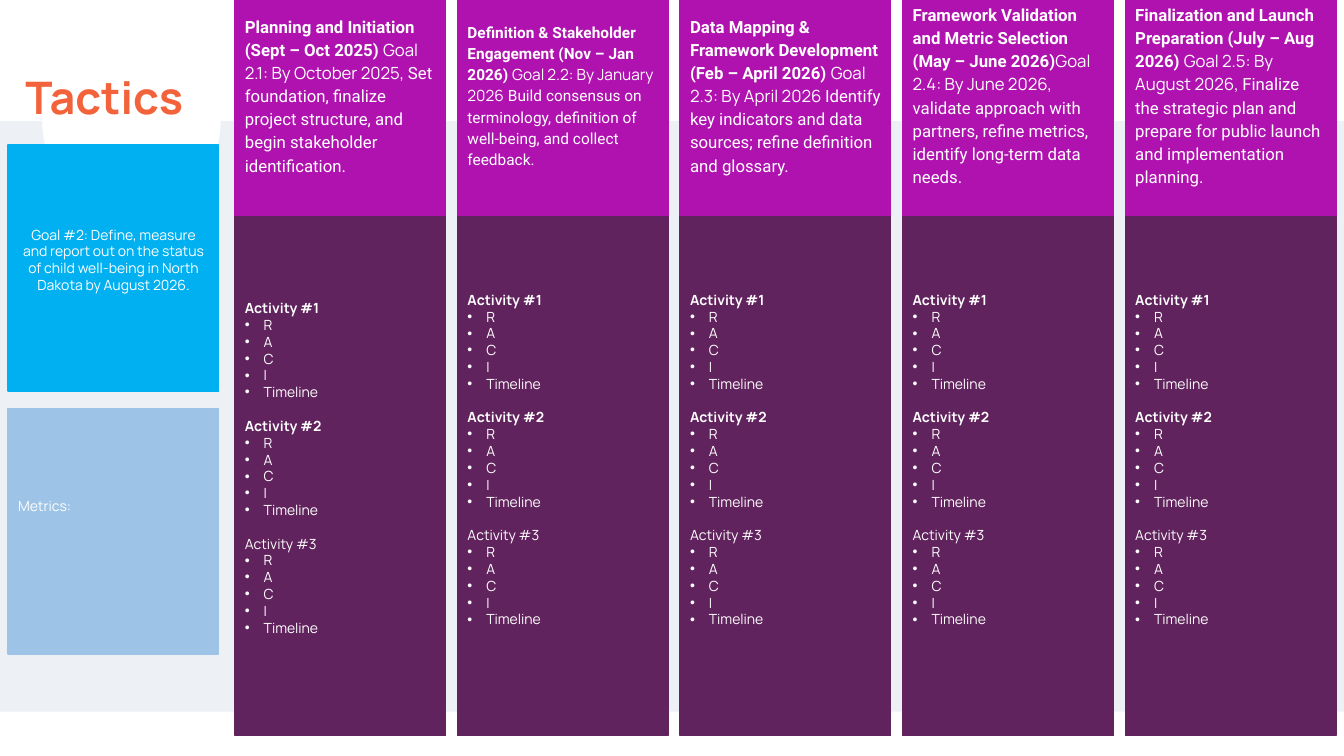
from dataclasses import dataclass

from lxml.etree import SubElement
from pptx import Presentation
from pptx.dml.color import RGBColor as RGB
from pptx.enum.shapes import MSO_SHAPE as SHAPE
from pptx.enum.text import MSO_ANCHOR as ANCHOR, PP_ALIGN as ALIGN
from pptx.oxml.ns import qn
from pptx.util import Pt


@dataclass(frozen=True)
class Theme:
    white: RGB = RGB(0xFF, 0xFF, 0xFF)
    band: RGB = RGB(0xED, 0xF0, 0xF5)
    title: RGB = RGB(0xF3, 0x63, 0x3B)
    phase: RGB = RGB(0xB0, 0x12, 0xB0)
    activities: RGB = RGB(0x61, 0x23, 0x5D)
    goal: RGB = RGB(0x00, 0xB0, 0xF0)
    metrics: RGB = RGB(0x9D, 0xC3, 0xE6)
    body_font: str = "Manrope"
    phase_font: str = "Roboto"
    title_size: int = 32
    body_size: int = 10


THEME = Theme()
LINE = 12  # height of one line of body text

PHASES = [
    (12, "Planning and Initiation (Sept – Oct 2025) ",
     "Goal 2.1: By October 2025, ",
     "Set foundation, finalize project structure, and begin stakeholder identification."),
    (11, "Definition & Stakeholder Engagement (Nov – Jan 2026) ",
     "Goal 2.2: By January 2026",
     " Build consensus on terminology, definition of well-being, and collect feedback."),
    (12, "Data Mapping & Framework Development (Feb – April 2026) ",
     "Goal 2.3: By April 2026 ",
     "Identify key indicators and data sources; refine definition and glossary."),
    (12, "Framework Validation and Metric Selection (May – June 2026)",
     "Goal 2.4: By June 2026, ",
     "validate approach with partners, refine metrics, identify long-term data needs."),
    (12, "Finalization and Launch Preparation (July – Aug 2026) ",
     "Goal 2.5: By August 2026, ",
     "Finalize the strategic plan and prepare for public launch and implementation planning."),
]
ACTIVITIES = [("Activity #1", True), ("Activity #2", True), ("Activity #3", False)]
ROLES = ["R", "A", "C", "I", "Timeline"]

COLUMN_LEFT, COLUMN_PITCH, COLUMN_WIDTH = 167.8, 159, 150.5
PHASE_HEIGHT, ACTIVITIES_HEIGHT = 154.8, 370.8
SIDE_LEFT, SIDE_HEIGHT = 5.8, 175.7

deck = Presentation()
deck.slide_width, deck.slide_height = Pt(960), Pt(540)
slide = deck.slides.add_slide(deck.slide_layouts[6])


def add_panel(left, top, width, height, color, kind=SHAPE.RECTANGLE, outlined=True):
    """Add a filled shape; its text is left-aligned and centred vertically."""
    panel = slide.shapes.add_shape(kind, Pt(left), Pt(top), Pt(width), Pt(height))
    panel.shadow.inherit = False
    panel.fill.solid()
    panel.fill.fore_color.rgb = color
    if outlined:
        panel.line.color.rgb = color
        panel.line.width = Pt(1)
    else:
        panel.line.fill.background()
    frame = panel.text_frame
    frame.word_wrap = True
    frame.vertical_anchor = ANCHOR.MIDDLE
    frame.paragraphs[0].alignment = ALIGN.LEFT
    return frame


def add_run(paragraph, text, size=THEME.body_size, font=THEME.body_font,
            color=THEME.white, bold=False):
    run = paragraph.add_run()
    run.text = text
    run.font.size = Pt(size)
    run.font.name = font
    run.font.bold = bold
    run.font.color.rgb = color


# Backdrop and title
add_panel(0, 86.4, 960, 421.9, THEME.band, outlined=False)
add_panel(30.2, 23.8, 127.4, 127.4, THEME.white, SHAPE.OVAL, outlined=False)

title = slide.shapes.add_textbox(Pt(5.8), Pt(10.8), Pt(137.5), Pt(121.7)).text_frame
title.word_wrap = True
title.vertical_anchor = ANCHOR.MIDDLE
title.paragraphs[0].alignment = ALIGN.CENTER
title.paragraphs[0].line_spacing = 0.9
add_run(title.paragraphs[0], "Tactics", THEME.title_size, color=THEME.title, bold=True)

# Goal and metrics
goal = add_panel(SIDE_LEFT, 103.7, COLUMN_WIDTH, SIDE_HEIGHT, THEME.goal)
goal.margin_bottom = Pt(3.6 + LINE)
goal.paragraphs[0].alignment = ALIGN.CENTER
add_run(goal.paragraphs[0], "Goal #2: Define, measure and report out on the status "
        "of child well-being in North Dakota by August 2026.")

metrics = add_panel(SIDE_LEFT, 291.6, COLUMN_WIDTH, SIDE_HEIGHT, THEME.metrics)
metrics.margin_bottom = Pt(3.6 + 3 * LINE)
add_run(metrics.paragraphs[0], "Metrics:")

# One column per phase
for column, (size, name, deadline, work) in enumerate(PHASES):
    left = COLUMN_LEFT + column * COLUMN_PITCH

    phase = add_panel(left, 0, COLUMN_WIDTH, PHASE_HEIGHT, THEME.phase)
    phase.margin_top, phase.margin_bottom = Pt(0), Pt(20)
    summary = phase.paragraphs[0]
    summary.line_spacing = 1.15
    add_run(summary, name, size, THEME.phase_font, bold=True)
    add_run(summary, deadline, size)
    add_run(summary, work, size, THEME.phase_font)

    plan = add_panel(left, PHASE_HEIGHT, COLUMN_WIDTH, ACTIVITIES_HEIGHT, THEME.activities)
    plan.margin_bottom = Pt(3.6 + LINE * (1 if column == 0 else 2))
    for number, (activity, bold) in enumerate(ACTIVITIES):
        heading = plan.add_paragraph() if number else plan.paragraphs[0]
        heading.alignment = ALIGN.LEFT
        if number:
            heading.space_before = Pt(LINE)
        add_run(heading, activity, bold=bold)
        for role in ROLES:
            item = plan.add_paragraph()
            item.alignment = ALIGN.LEFT
            properties = item._p.get_or_add_pPr()
            properties.set("marL", str(Pt(13.5)))
            properties.set("indent", str(-Pt(13.5)))
            SubElement(properties, qn("a:buFont"), typeface="Arial")
            SubElement(properties, qn("a:buChar"), char="•")
            add_run(item, role)

deck.save("out.pptx")
